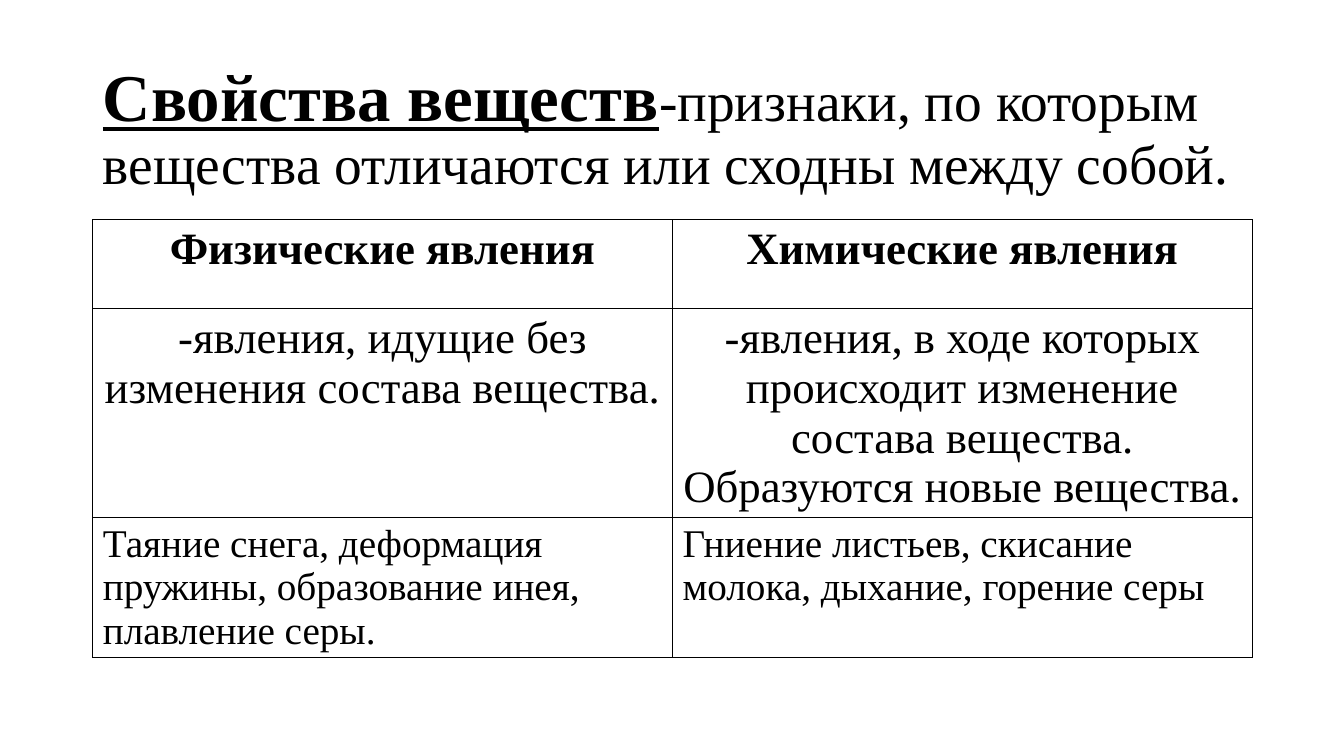
"""Builds a slide comparing physical and chemical phenomena."""
from lxml.etree import SubElement
from pptx import Presentation
from pptx.dml.color import RGBColor
from pptx.enum.text import MSO_ANCHOR, MSO_AUTO_SIZE, PP_ALIGN
from pptx.oxml.ns import qn
from pptx.util import Inches, Pt

BLACK = "000000"
WHITE = "FFFFFF"


def add_run(paragraph, text, size, bold=False, underline=False):
    run = paragraph.add_run()
    run.text = text
    run.font.name = "Times New Roman"
    run.font.size = Pt(size)
    run.font.bold = bold
    run.font.underline = underline
    run.font.color.rgb = RGBColor.from_string(BLACK)


def style_cell(cell):
    properties = cell._tc.get_or_add_tcPr()
    for side in ("a:lnL", "a:lnR", "a:lnT", "a:lnB"):
        border = SubElement(properties, qn(side), w=str(Pt(1)))
        border_fill = SubElement(border, qn("a:solidFill"))
        SubElement(border_fill, qn("a:srgbClr"), val=BLACK)
    cell.fill.solid()
    cell.fill.fore_color.rgb = RGBColor.from_string(WHITE)


presentation = Presentation()
presentation.slide_width = Inches(13.33)
presentation.slide_height = Inches(7.5)
slide = presentation.slides.add_slide(presentation.slide_layouts[5])

title = slide.shapes.title
title.left, title.top = Inches(0.92), Inches(0.4)
title.width, title.height = Inches(11.5), Inches(1.78)
title_frame = title.text_frame
title_frame.word_wrap = True
title_frame.auto_size = MSO_AUTO_SIZE.NONE
title_frame.vertical_anchor = MSO_ANCHOR.MIDDLE
title_paragraph = title_frame.paragraphs[0]
title_paragraph.alignment = PP_ALIGN.LEFT
title_paragraph.line_spacing = 0.9
add_run(title_paragraph, "Свойства веществ", 47.7, bold=True, underline=True)
add_run(title_paragraph, "-признаки, по которым вещества отличаются или сходны между собой.", 39.6)

table_rows = [
    (0.88, 32, True, PP_ALIGN.CENTER, ("Физические явления", "Химические явления")),
    (2.07, 32, False, PP_ALIGN.CENTER, (
        "-явления, идущие без изменения состава вещества.",
        "-явления, в ходе которых происходит изменение состава вещества. "
        "Образуются новые вещества.")),
    (1.39, 28, False, PP_ALIGN.LEFT, (
        "Таяние снега, деформация пружины, образование инея, плавление серы.",
        "Гниение листьев, скисание молока, дыхание, горение серы")),
]
table_height = sum(row[0] for row in table_rows)
table = slide.shapes.add_table(
    len(table_rows), 2, Inches(0.92), Inches(2.18), Inches(11.5), Inches(table_height)).table

for row_index, (height, size, bold, alignment, texts) in enumerate(table_rows):
    table.rows[row_index].height = Inches(height)
    for column_index, text in enumerate(texts):
        cell = table.cell(row_index, column_index)
        style_cell(cell)
        paragraph = cell.text_frame.paragraphs[0]
        paragraph.alignment = alignment
        add_run(paragraph, text, size, bold)

presentation.save("out.pptx")
